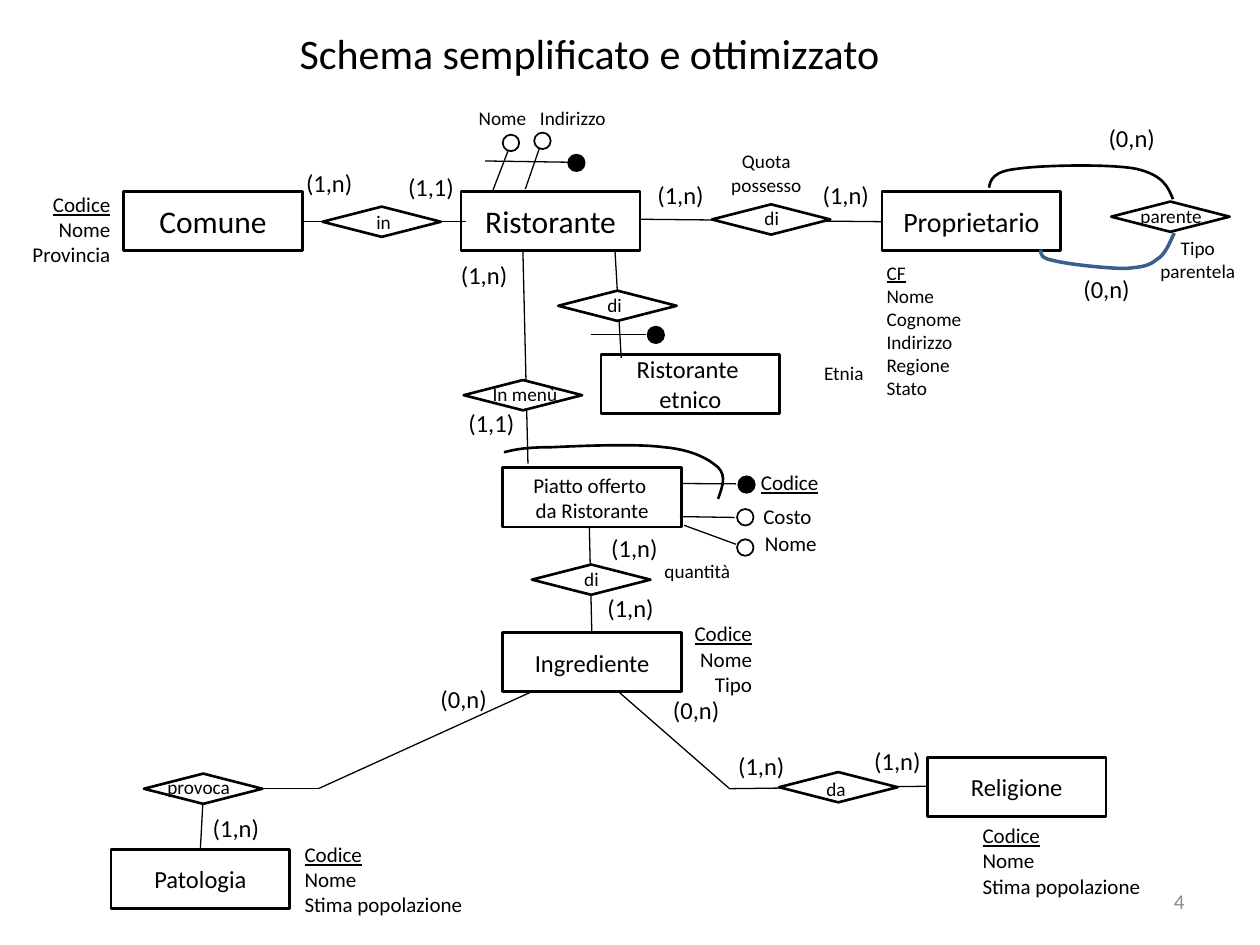
from lxml import etree
from pptx import Presentation
from pptx.dml.color import RGBColor
from pptx.enum.shapes import MSO_CONNECTOR, MSO_SHAPE
from pptx.enum.text import MSO_ANCHOR, PP_ALIGN
from pptx.oxml.ns import qn
from pptx.util import Pt

LEFT, CENTER, RIGHT = PP_ALIGN.LEFT, PP_ALIGN.CENTER, PP_ALIGN.RIGHT
TOP, MIDDLE = MSO_ANCHOR.TOP, MSO_ANCHOR.MIDDLE
RECTANGLE, DIAMOND, OVAL = MSO_SHAPE.RECTANGLE, MSO_SHAPE.DIAMOND, MSO_SHAPE.OVAL
STRAIGHT = MSO_CONNECTOR.STRAIGHT
COLORS = {"ink": "000000", "paper": "FFFFFF", "kinship": "3A5F8C", "number": "8C8C8C"}
FONT = "Calibri"
ENTITY_SIZE = (102.2, 33.8)
RELATION_SIZE = (67.7, 17.3)
RELATION_LABEL_WIDTH = 54
DOT = 9.4


def color(name):
    return RGBColor.from_string(COLORS[name])


def write(shape, lines, size, align, anchor, ink="ink", key=False):
    """Write one paragraph per line; with key, the first line is underlined."""
    frame = shape.text_frame
    frame.word_wrap = True
    frame.vertical_anchor = anchor
    for index, line in enumerate(lines):
        paragraph = frame.paragraphs[0] if index == 0 else frame.add_paragraph()
        paragraph.alignment = align
        run = paragraph.add_run()
        run.text = line
        run.font.name = FONT
        run.font.size = Pt(size)
        run.font.color.rgb = color(ink)
        if key and index == 0:
            run.font.underline = True


def bend(shape):
    """Turn each three straight segments into one cubic Bézier segment."""
    segments = list(shape._element.iter(qn("a:lnTo")))
    for index in range(0, len(segments), 3):
        first, *others = segments[index:index + 3]
        cubic = etree.Element(qn("a:cubicBezTo"))
        first.addprevious(cubic)
        for segment in (first, *others):
            cubic.append(segment[0])
            segment.getparent().remove(segment)


class Region:
    """Draws diagram parts relative to its own top left corner."""

    def __init__(self, slide, left, top):
        self.shapes = slide.shapes
        self.left, self.top = left, top

    def place(self, x, y):
        return Pt(self.left + x), Pt(self.top + y)

    def outline(self, kind, x, y, width, height, weight, fill=None):
        shape = self.shapes.add_shape(kind, *self.place(x, y), Pt(width), Pt(height))
        self.style(shape, weight, "ink", fill)
        return shape

    def style(self, shape, weight, ink, fill=None):
        shape.shadow.inherit = False
        if fill:
            shape.fill.solid()
            shape.fill.fore_color.rgb = color(fill)
        else:
            shape.fill.background()
        shape.line.color.rgb = color(ink)
        shape.line.width = Pt(weight)

    def line(self, x1, y1, x2, y2):
        connector = self.shapes.add_connector(
            STRAIGHT, *self.place(x1, y1), *self.place(x2, y2))
        connector.line.color.rgb = color("ink")
        connector.line.width = Pt(0.75)
        etree.SubElement(connector._element.spPr, qn("a:effectLst"))

    def curve(self, start, points, ink="ink", weight=1.5):
        """Draw Bézier segments; each takes two control points and an end."""
        builder = self.shapes.build_freeform(*self.place(*start), scale=1.0)
        builder.add_line_segments([self.place(*point) for point in points], close=False)
        shape = builder.convert_to_shape()
        bend(shape)
        self.style(shape, weight, ink)

    def entity(self, x, y, size, *lines):
        shape = self.outline(RECTANGLE, x, y, *ENTITY_SIZE, 1.5)
        write(shape, lines, size, CENTER, MIDDLE)

    def text(self, x, y, width, lines, size=11, align=CENTER, key=False,
             height=None, anchor=TOP, ink="ink"):
        height = height or 7.2 + len(lines) * size * 1.22
        box = self.shapes.add_textbox(*self.place(x, y), Pt(width), Pt(height))
        write(box, lines, size, align, anchor, ink, key)
        return box

    def relation(self, x, y, name, label_center, label_top):
        self.outline(DIAMOND, x, y, *RELATION_SIZE, 1.5, "paper")
        self.text(label_center - RELATION_LABEL_WIDTH / 2, label_top,
                  RELATION_LABEL_WIDTH, [name])

    def cardinality(self, x, y, value):
        self.text(x, y, 41, [value], 14, LEFT).text_frame.word_wrap = False

    def dot(self, x, y, fill="paper"):
        self.outline(OVAL, x, y, DOT, DOT, 1, fill)


def draw_town(slide, left, top):
    region = Region(slide, left, top)
    region.line(164.8, 34.7, 258.4, 34.7)
    region.entity(62.6, 17.6, 18, "Comune")
    region.relation(176.3, 26.1, "in", 211.2, 24.4)
    region.text(-0.4, 13.8, 62.6, ["Codice", "Nome", "Provincia"], 12, RIGHT, True)
    region.cardinality(159.8, 0.2, "(1,n)")
    region.cardinality(218.1, 3, "(1,1)")


def draw_restaurant(slide, left, top):
    region = Region(slide, left, top)
    region.line(95.4, 86.6, 99, 148.5)
    region.line(42.8, 87.3, 45.7, 209)
    region.entity(7.5, 53.4, 18, "Ristorante")
    region.entity(87.4, 146.5, 14, "Ristorante ", "etnico")
    region.relation(9, 161.2, "In menù", 44, 158.6)
    region.relation(63, 110.1, "di", 95.2, 108.2)
    region.cardinality(0.3, 88.9, "(1,n)")
    region.cardinality(4.6, 173.7, "(1,1)")
    region.line(25.7, 52.7, 35.1, 28.2)
    region.dot(31.3, 21)
    region.line(44.2, 52, 52.9, 26.8)
    region.dot(49.3, 19.8)
    region.line(21.2, 36, 68.7, 36.7)
    region.dot(68.7, 32.4, "ink")
    region.line(81.7, 135.3, 113.4, 135.3)
    region.dot(114.1, 130.7, "ink")
    region.text(5.6, 0.9, 51, ["Nome"])
    region.text(38.2, 1.4, 66.2, ["Indirizzo"])
    region.text(200.7, 147, 51, ["Etnia"])


def draw_owner(slide, left, top):
    region = Region(slide, left, top)
    region.line(0, 58.3, 138, 59.7)
    region.entity(138, 42.4, 16, "Proprietario")
    region.relation(40.8, 49.8, "di", 75, 47.5)
    region.relation(269, 48.2, "parente", 303.2, 46)
    region.curve((304.3, 46.8), [
        (301.4, 39.6), (298.6, 33.1), (283.4, 29.5),
        (269, 26.6), (229.4, 27.3), (215, 29.5),
        (201.4, 30.9), (199.9, 36), (199.2, 40.3)])
    region.curve((228.7, 75.6), [
        (228.7, 78.4), (228.7, 80.6), (236.6, 82),
        (245.3, 84.2), (267.6, 86.4), (277, 86.4),
        (287, 85.6), (290.6, 84.9), (295, 81.3),
        (300, 78.4), (302.2, 72), (305, 66.2)], "kinship", 2)
    for x, y, value in [(2.6, 32.4, "(1,n)"), (97, 32.4, "(1,n)"),
                        (246, 86.2, "(0,n)"), (260.4, 0, "(0,n)")]:
        region.cardinality(x, y, value)
    region.text(287.2, 64.6, 62.6, ["Tipo", "parentela"])
    region.text(37.7, 15, 68.4, ["Quota possesso"], height=34)
    region.text(133.5, 78.6, 68.4, ["CF", "Nome", "Cognome", "Indirizzo",
                                    "Regione", "Stato"], 11, LEFT, True)


def draw_dish(slide, left, top):
    region = Region(slide, left, top)
    region.entity(0.3, 14.3, 12, "Piatto offerto ", "da Ristorante")
    region.line(101.8, 23.3, 133.5, 23.5)
    region.dot(134.9, 19.2, "ink")
    region.line(101.5, 42.2, 132.8, 42.7)
    region.dot(134.2, 37.9)
    region.line(104, 47.2, 133.5, 58)
    region.dot(134.2, 55.2)
    region.text(140.2, 12, 47.5, ["Codice"], 12, RIGHT, True)
    region.text(132, 31.4, 51.8, ["Costo"], 12, RIGHT)
    region.text(134.9, 46.5, 51.8, ["Nome"], 12, RIGHT)
    region.line(49.8, 48.7, 51.2, 108.4)
    region.relation(17, 69.6, "di", 51, 67.4)
    region.cardinality(55.2, 48, "(1,n)")
    region.cardinality(53, 82.5, "(1,n)")
    region.text(80.2, 63, 62.6, ["quantità"])
    region.curve((123.4, 32.1), [
        (125.6, 25.6), (128.4, 19.2), (123.4, 14.1),
        (117.6, 9.1), (108.3, 4), (92.4, 2.6),
        (76.6, 0.4), (43.5, 1.9), (28.4, 2.6),
        (13.2, 2.6), (6.8, 4), (1, 5.5)])


def draw_ingredient(slide, left, top):
    region = Region(slide, left, top)
    region.entity(42.3, 10.6, 14, "Ingrediente")
    region.text(140, 0.2, 51.8, ["Codice", "Nome", "Tipo"], 12, RIGHT, True)
    region.cardinality(-0.4, 36.4, "(0,n)")
    region.cardinality(132.5, 42.8, "(0,n)")


def draw_pathology(slide, left, top):
    region = Region(slide, left, top)
    region.line(87.5, 55.7, 118.9, 55.7)
    region.line(118.9, 55.7, 240.8, 0.3)
    region.line(52.9, 64.4, 51.5, 90.3)
    region.entity(0.4, 90.3, 14, "Patologia")
    region.relation(19.3, 47.1, "provoca", 50.5, 44.2)
    region.cardinality(51.5, 66.3, "(1,n)")
    region.text(104, 82.2, 113, ["Codice", "Nome", "Stima popolazione"], 12, LEFT, True)


def draw_religion(slide, left, top):
    region = Region(slide, left, top)
    region.line(63.9, 55.7, 176.9, 54.3)
    region.line(63.9, 55.7, 0.5, 0.3)
    region.entity(176.9, 37.7, 14, "Religione")
    region.relation(92.2, 46.2, "da", 124.7, 45.6)
    region.cardinality(61.7, 30.5, "(1,n)")
    region.cardinality(139.5, 27.6, "(1,n)")
    region.text(201.4, 71.6, 113, ["Codice", "Nome", "Stima popolazione"], 12, LEFT, True)


def main():
    presentation = Presentation()
    presentation.slide_width, presentation.slide_height = Pt(720), Pt(540)
    slide = presentation.slides.add_slide(presentation.slide_layouts[6])
    page = Region(slide, 0, 0)
    page.text(140.4, 14.4, 393, ["Schema semplificato e ottimizzato"], 24,
              height=31.7, anchor=MIDDLE)
    draw_town(slide, 8, 92)
    draw_restaurant(slide, 256, 56)
    draw_owner(slide, 366, 67)
    draw_dish(slide, 287, 253)
    draw_ingredient(slide, 245, 351)
    draw_pathology(slide, 63, 395)
    draw_religion(slide, 353, 395)
    page.text(516.2, 500.4, 167.8, ["4"], 12, RIGHT, height=28.8,
              anchor=MIDDLE, ink="number")
    presentation.save("out.pptx")


if __name__ == "__main__":
    main()
